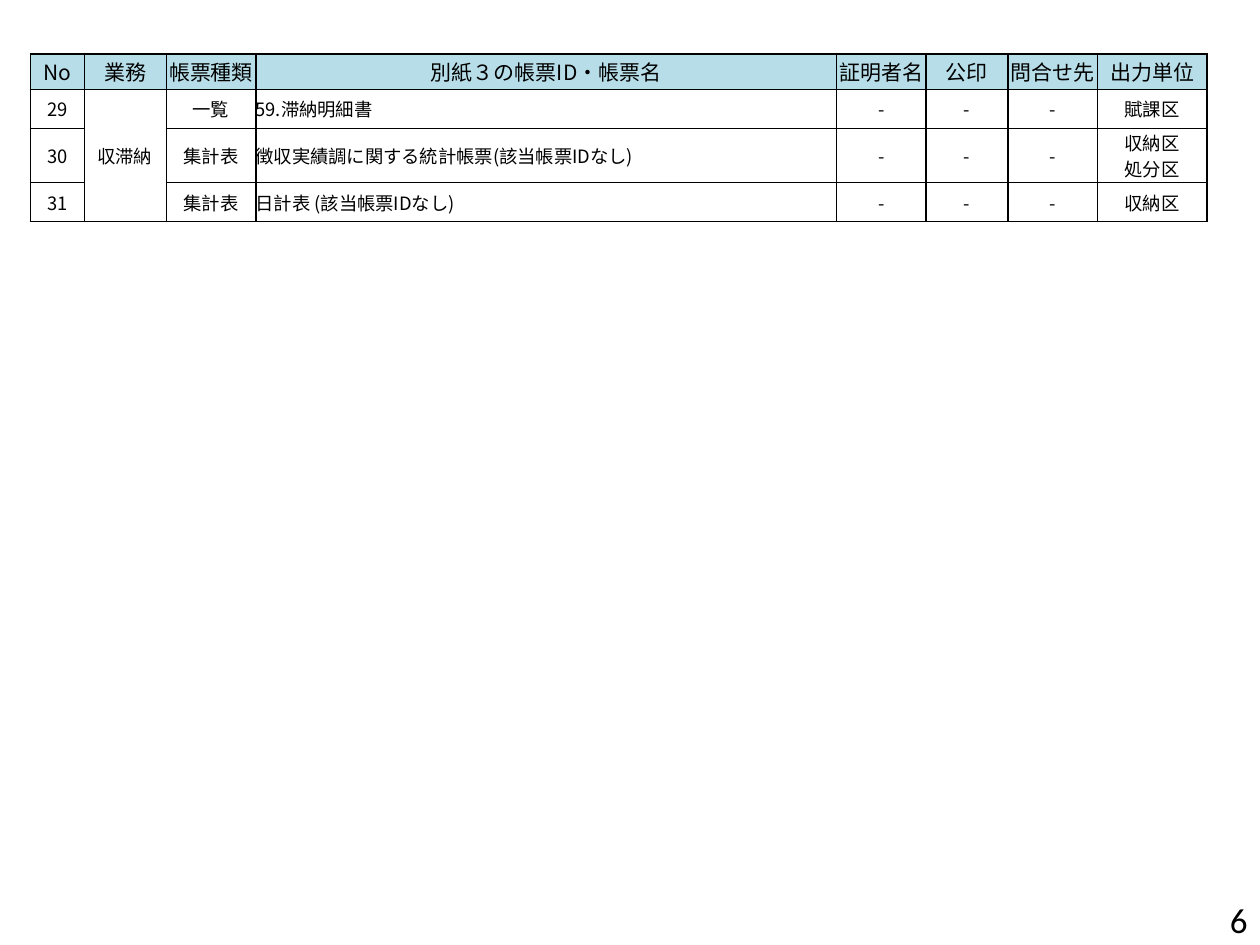
from pptx import Presentation
from pptx.dml.color import RGBColor
from pptx.enum.text import MSO_ANCHOR as Anchor, PP_ALIGN as Align
from pptx.oxml.ns import qn
from pptx.util import Inches, Pt
from lxml.etree import SubElement

COLORS = {"black": "000000", "header": "B7DEE8", "body": "FFFFFF"}
TABLE_FONT = "Noto Sans CJK JP"


def write_text(text_frame, text, font="Calibri", size=20, align=Align.LEFT):
    paragraph = text_frame.paragraphs[0]
    paragraph.text = text
    paragraph.alignment = align
    for line_break in paragraph._p.findall(qn("a:br")):
        SubElement(line_break, qn("a:rPr"), sz=str(int(size * 100)))
    for run in paragraph.runs:
        run.font.name = font
        run.font.size = Pt(size)
        run.font.color.rgb = RGBColor.from_string(COLORS["black"])
        SubElement(run._r.get_or_add_rPr(), qn("a:ea"), typeface=font)


def format_cell(cell, fill, margin):
    cell.vertical_anchor = Anchor.MIDDLE
    if margin is not None:
        cell.margin_left = cell.margin_right = Inches(margin)
        cell.margin_top = cell.margin_bottom = Inches(margin)
    properties = cell._tc.get_or_add_tcPr()
    for side in ("a:lnL", "a:lnR", "a:lnT", "a:lnB"):
        line = SubElement(properties, qn(side), w=str(Pt(1)))
        line_fill = SubElement(line, qn("a:solidFill"))
        SubElement(line_fill, qn("a:srgbClr"), val=COLORS["black"])
    cell.fill.solid()
    cell.fill.fore_color.rgb = RGBColor.from_string(COLORS[fill])


presentation = Presentation()
presentation.slide_width = Inches(10)
presentation.slide_height = Inches(7.5)
slide = presentation.slides.add_slide(presentation.slide_layouts[6])

page_number = slide.shapes.add_textbox(Inches(7.67), Inches(7.1), Inches(2.33), Inches(0.4))
page_number.text_frame.word_wrap = True
page_number.text_frame.vertical_anchor = Anchor.MIDDLE
write_text(page_number.text_frame, "6", align=Align.RIGHT)

rows = [
    ["No", "業務", "帳票種類", "別紙３の帳票ID・帳票名", "証明者名", "公印", "問合せ先", "出力単位"],
    ["29", "収滞納", "一覧", "59.滞納明細書", "-", "-", "-", "賦課区"],
    ["30", "", "集計表", "徴収実績調に関する統計帳票(該当帳票IDなし)", "-", "-", "-", "収納区\n処分区"],
    ["31", "", "集計表", "日計表 (該当帳票IDなし)", "-", "-", "-", "収納区"],
]
column_widths = [0.43, 0.65, 0.71, 4.61, 0.71, 0.65, 0.71, 0.87]
row_heights = [0.28, 0.31, 0.43, 0.31]
TASK_COLUMN, NAME_COLUMN = 1, 3

table = slide.shapes.add_table(
    len(rows), len(column_widths), Inches(0.24), Inches(0.43),
    Inches(sum(column_widths)), Inches(sum(row_heights)),
).table
table.first_row = False
table.horz_banding = False
for column, width in zip(table.columns, column_widths):
    column.width = Inches(width)
for row, height in zip(table.rows, row_heights):
    row.height = Inches(height)

for row_index, row_texts in enumerate(rows):
    is_header = row_index == 0
    for column_index, text in enumerate(row_texts):
        cell = table.cell(row_index, column_index)
        is_task = column_index == TASK_COLUMN and not is_header
        is_left = column_index in (TASK_COLUMN, NAME_COLUMN) and not is_header
        format_cell(cell, "header" if is_header else "body", None if is_task else 0)
        if text:
            write_text(cell.text_frame, text, font=TABLE_FONT, size=12 if is_header else 10.5,
                       align=Align.LEFT if is_left else Align.CENTER)

table.cell(1, TASK_COLUMN).merge(table.cell(3, TASK_COLUMN))

presentation.save("out.pptx")
